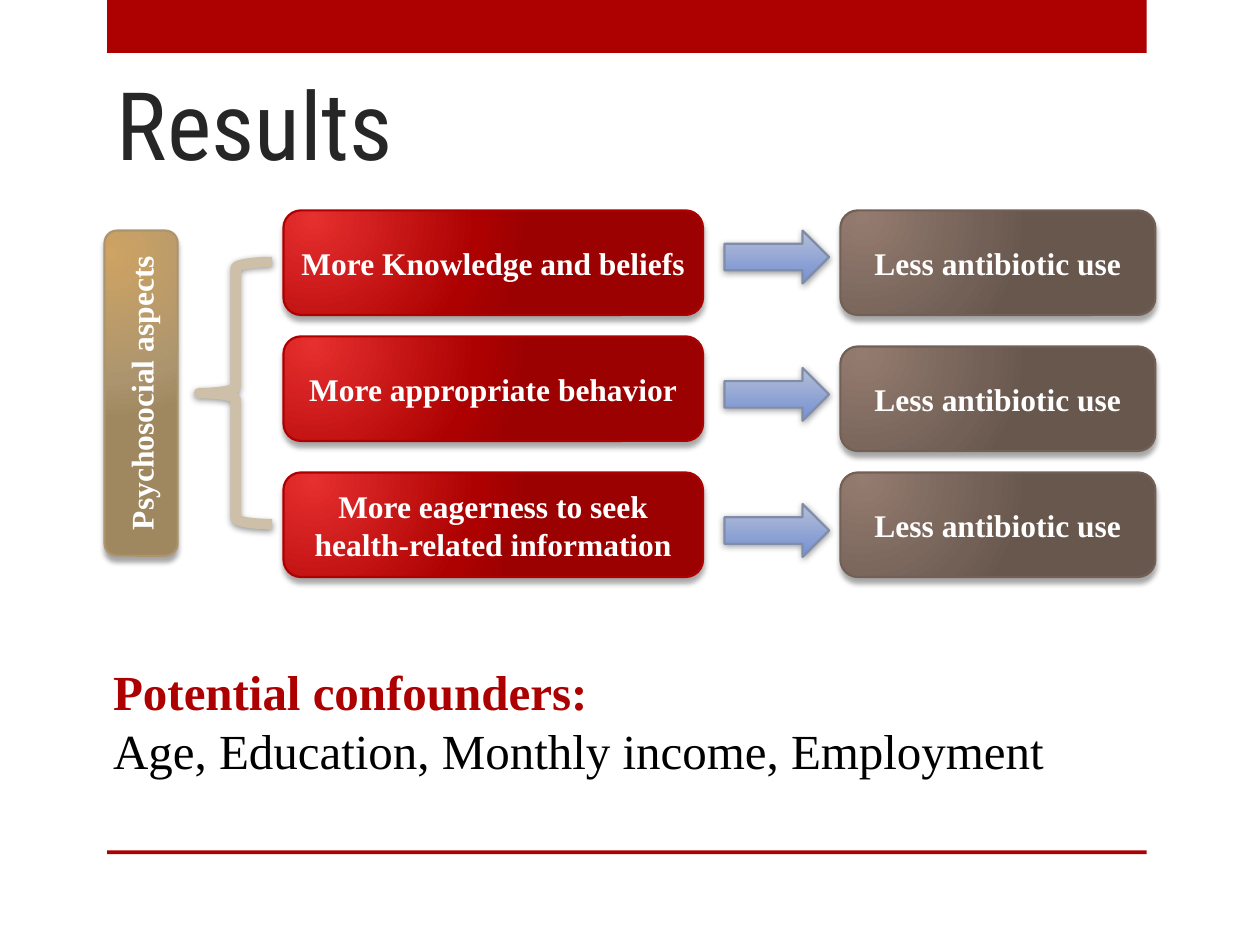
from dataclasses import dataclass

from lxml import etree
from pptx import Presentation
from pptx import util as u
from pptx.dml import color
from pptx.enum import shapes, text
from pptx.oxml import ns

SERIF = "Times New Roman"
ACCENT = "AD0101"


@dataclass(frozen=True)
class Look:
    stops: tuple
    line: str
    line_width: float = 1.25
    circular: bool = True
    shadow: tuple = (35, 3, 3, 90)


@dataclass(frozen=True)
class Box:
    left: float
    top: float
    width: float
    height: float


@dataclass(frozen=True)
class Line:
    words: str
    size: float
    hue: str
    bold: bool = False
    font: str = SERIF


SOFT_SHADOW = (40, 4, 1, 88)
RED = Look(((0, "E62F2F"), (76, ACCENT), (100, "9C0101")), ACCENT)
BROWN = Look(((0, "947B6F"), (76, "726056"), (100, "67574D")), "726056")
GOLD = Look(((0, "CEA363"), (76, "AC956E"), (100, "9F875F")), "AC956E")
BLUE = Look(((0, "B4BED5"), (100, "7590D4")), "808DA9",
            circular=False, shadow=SOFT_SHADOW)
BRACE = Look((), "CDBFA8", line_width=6, shadow=SOFT_SHADOW)


def rgb(value: str) -> color.RGBColor:
    return color.RGBColor.from_string(value)


def add_child(parent, tag: str, **attributes):
    values = {name: str(value) for name, value in attributes.items()}
    return etree.SubElement(parent, ns.qn(tag), values)


def place(box: Box) -> tuple:
    return tuple(u.Inches(side) for side in (box.left, box.top, box.width, box.height))


def set_gradient(shape, look: Look) -> None:
    properties = shape._element.spPr
    gradient = etree.Element(ns.qn("a:gradFill"), {"rotWithShape": "1"})
    stop_list = add_child(gradient, "a:gsLst")
    for position, hue in look.stops:
        stop = add_child(stop_list, "a:gs", pos=position * 1000)
        add_child(stop, "a:srgbClr", val=hue)
    if look.circular:
        circle = add_child(gradient, "a:path", path="circle")
        add_child(circle, "a:fillToRect", l=15000, t=15000, r=100000, b=100000)
    else:
        add_child(gradient, "a:lin", ang=90 * 60000, scaled=0)
    properties.replace(properties.find(ns.qn("a:noFill")), gradient)


def set_shadow(shape, look: Look) -> None:
    alpha, blur, distance, direction = look.shadow
    effects = shape._element.spPr.find(ns.qn("a:effectLst"))
    shadow = add_child(effects, "a:outerShdw", blurRad=u.Pt(blur), dist=u.Pt(distance),
                       dir=direction * 60000, rotWithShape=0)
    hue = add_child(shadow, "a:srgbClr", val="000000")
    add_child(hue, "a:alpha", val=alpha * 1000)


def write(shape, lines: list, anchor, alignment) -> None:
    frame = shape.text_frame
    frame.word_wrap = True
    frame.vertical_anchor = anchor
    for index, line in enumerate(lines):
        paragraph = frame.add_paragraph() if index else frame.paragraphs[0]
        paragraph.alignment = alignment
        run = paragraph.add_run()
        run.text = line.words
        formats = {"name": line.font, "size": u.Pt(line.size), "bold": line.bold}
        for name, value in formats.items():
            setattr(run.font, name, value)
        run.font.color.rgb = rgb(line.hue)


def add_figure(slide, kind, box: Box, look: Look, words: str = "", rotation: float = 0):
    shape = slide.shapes.add_shape(kind, *place(box))
    shape.rotation = rotation
    shape.fill.background()
    shape.line.color.rgb = rgb(look.line)
    shape.line.width = u.Pt(look.line_width)
    shape.shadow.inherit = False
    set_shadow(shape, look)
    if look.stops:
        set_gradient(shape, look)
    if words:
        write(shape, [Line(words, 18, "FFFFFF", True)],
              text.MSO_ANCHOR.MIDDLE, text.PP_ALIGN.CENTER)


def add_bar(slide, box: Box) -> None:
    bar = slide.shapes.add_shape(shapes.MSO_SHAPE.RECTANGLE, *place(box))
    bar.fill.solid()
    bar.fill.fore_color.rgb = rgb(ACCENT)
    bar.line.fill.background()
    bar.shadow.inherit = False


def add_text(slide, box: Box, lines: list, anchor) -> None:
    shape = slide.shapes.add_textbox(*place(box))
    write(shape, lines, anchor, text.PP_ALIGN.LEFT)


def main() -> None:
    presentation = Presentation()
    presentation.slide_width = u.Inches(10)
    presentation.slide_height = u.Inches(7.5)
    slide = presentation.slides.add_slide(presentation.slide_layouts[6])
    kinds = shapes.MSO_SHAPE

    for top, height in ((0, 0.42), (6.75, 0.03)):
        add_bar(slide, Box(0.85, top, 8.25, height))

    causes = (
        ("More Knowledge and beliefs", 1.67),
        ("More appropriate behavior", 2.67),
        ("More eagerness to seek health-related information", 3.75),
    )
    for words, top in causes:
        add_figure(slide, kinds.ROUNDED_RECTANGLE, Box(2.25, top, 3.33, 0.83), RED, words)
    for top in (1.67, 2.75, 3.75):
        add_figure(slide, kinds.ROUNDED_RECTANGLE, Box(6.67, top, 2.5, 0.83), BROWN,
                   "Less antibiotic use")
    add_figure(slide, kinds.LEFT_BRACE, Box(1.58, 2.08, 0.58, 2.08), BRACE)
    for top in (1.83, 2.92, 4):
        add_figure(slide, kinds.RIGHT_ARROW, Box(5.75, top, 0.83, 0.42), BLUE)
    add_figure(slide, kinds.ROUNDED_RECTANGLE, Box(-0.17, 2.83, 2.58, 0.58), GOLD,
               "Psychosocial aspects", 270)

    confounders = [
        Line("Potential confounders:", 28, "AD0000", True),
        Line("Age, Education, Monthly income, Employment", 28, "000000"),
    ]
    add_text(slide, Box(0.8, 5.2, 8.17, 1.04), confounders, text.MSO_ANCHOR.TOP)
    add_text(slide, Box(0.83, 0.12, 7.42, 1.35),
             [Line("Results", 54, "262626", font="Roboto Condensed")],
             text.MSO_ANCHOR.BOTTOM)
    presentation.save("out.pptx")


if __name__ == "__main__":
    main()
